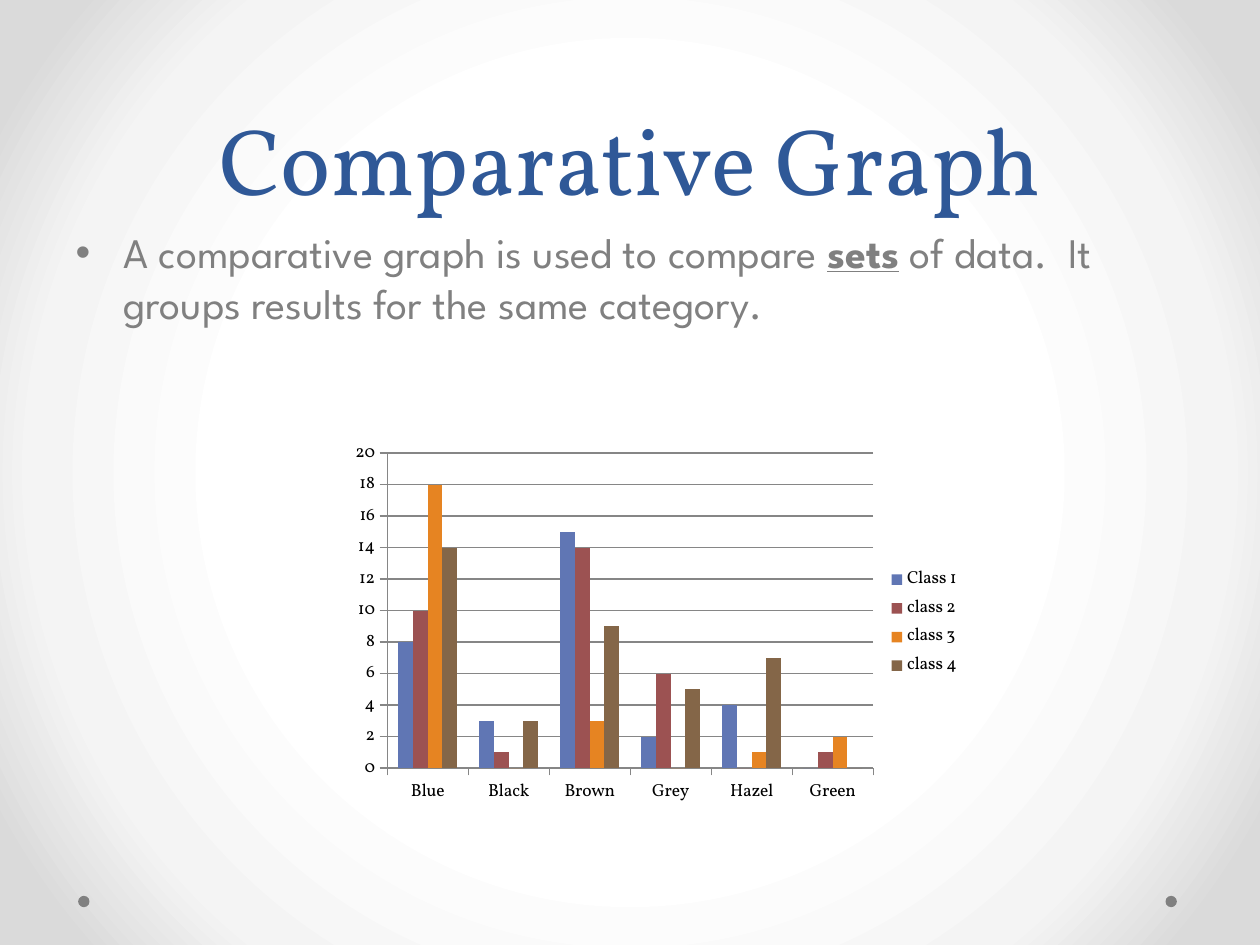
from lxml import etree
from pptx import Presentation, util as u
from pptx.chart import data
from pptx.dml.color import RGBColor
from pptx.enum import chart as ch, shapes, text
from pptx.oxml import ns, parse_xml

HUES = {"title": "2F5897", "grey": "808080", "axis": "868686", "ink": "000000",
        "bars": ["6076B4", "9C5252", "E68422", "846648"],
        "glow": {50: "FFFFFF", 76: "F4F4F4", 92: "DADADA"}}
HEAD, BODY = "Vollkorn", "League Spartan"


def rgb(hue):
    return RGBColor.from_string(hue)


class Deck:
    """Holds the style and the slide; places are shares of the slide's size."""

    def __init__(self, wide, high):
        self.prs = Presentation()
        self.prs.slide_width, self.prs.slide_height = u.Inches(wide), u.Inches(high)
        self.slide = self.prs.slides.add_slide(self.prs.slide_layouts[1])

    def box(self, x, y, w, h):
        wide, high = self.prs.slide_width, self.prs.slide_height
        return [round(n) for n in (x * wide, y * high, w * wide, h * high)]

    def glow(self, stops):
        """Round gradient that spreads from the centre of the background."""
        self.slide.background.fill.solid()
        pr = self.slide.background._cSld.bg.bgPr
        marks = "".join(f'<a:gs pos="{at * 1000}"><a:srgbClr val="{hue}"/></a:gs>'
                        for at, hue in stops.items())
        grad = parse_xml(
            f'<a:gradFill {ns.nsdecls("a")} rotWithShape="1"><a:gsLst>{marks}</a:gsLst>'
            '<a:path path="circle"><a:fillToRect l="50000" t="50000" r="50000" b="50000"/>'
            '</a:path></a:gradFill>')
        pr.replace(pr[0], grad)

    def dot(self, *place):
        dot = self.slide.shapes.add_shape(shapes.MSO_SHAPE.OVAL, *self.box(*place))
        dot.shadow.inherit = False
        dot.fill.solid()
        dot.fill.fore_color.rgb = rgb(HUES["grey"])
        dot.line.fill.background()

    def hold(self, index, anchor, *place):
        """Move a placeholder and return its first paragraph."""
        item = self.slide.placeholders[index]
        item.left, item.top, item.width, item.height = self.box(*place)
        frame = item.text_frame
        frame.auto_size = text.MSO_AUTO_SIZE.NONE
        frame.vertical_anchor = anchor
        return frame.paragraphs[0]

    def run(self, par, words, face, size, hue, strong=False):
        run = par.add_run()
        run.text = words
        font = run.font
        font.name, font.size, font.color.rgb = face, u.Pt(size), rgb(hue)
        font.bold = font.underline = strong

    def title(self, words, *place):
        par = self.hold(0, text.MSO_ANCHOR.BOTTOM, *place)
        par.alignment = text.PP_ALIGN.CENTER
        par.line_spacing = u.Pt(58)
        self.run(par, words, HEAD, 54, HUES["title"])

    def point(self, parts, *place):
        par = self.hold(1, text.MSO_ANCHOR.TOP, *place)
        par.space_before = u.Pt(4.8)
        pr = par._p.get_or_add_pPr()
        pr.set("marL", str(u.Inches(0.38)))
        pr.set("indent", str(u.Inches(-0.38)))
        etree.SubElement(pr, ns.qn("a:buFont")).set("typeface", "Arial")
        etree.SubElement(pr, ns.qn("a:buChar")).set("char", "•")
        for words, strong in parts:
            self.run(par, words, BODY, 24, HUES["grey"], strong)

    def chart(self, cats, rows, *place):
        facts = data.CategoryChartData()
        facts.categories = cats
        for name, vals in rows.items():
            facts.add_series(name, vals)
        kind = ch.XL_CHART_TYPE.COLUMN_CLUSTERED
        chart = self.slide.shapes.add_chart(kind, *self.box(*place), facts).chart
        chart.has_title = False
        chart.font.name, chart.font.size = HEAD, u.Pt(10)
        chart.font.color.rgb = rgb(HUES["ink"])
        # Legend
        chart.has_legend = True
        chart.legend.position = ch.XL_LEGEND_POSITION.RIGHT
        chart.legend.include_in_layout = False
        # Axes and grid
        scale = chart.value_axis
        scale.minimum_scale, scale.maximum_scale, scale.major_unit = 0, 20, 2
        scale.has_major_gridlines = True
        lines = [scale.major_gridlines.format.line]
        for axis in (scale, chart.category_axis):
            axis.major_tick_mark = ch.XL_TICK_MARK.OUTSIDE
            axis.minor_tick_mark = ch.XL_TICK_MARK.NONE
            lines.append(axis.format.line)
        for line in lines:
            line.color.rgb, line.width = rgb(HUES["axis"]), u.Pt(0.75)
        # Bars
        plot = chart.plots[0]
        plot.gap_width, plot.overlap, plot.vary_by_categories = 150, 0, False
        for bars, hue in zip(plot.series, HUES["bars"]):
            bars.format.fill.solid()
            bars.format.fill.fore_color.rgb = rgb(hue)


def main():
    deck = Deck(10, 7.5)

    # Background and corner dots
    deck.glow(HUES["glow"])
    for x in (0.925, 0.062):
        deck.dot(x, 0.948, 0.009, 0.012)

    # Heading and text
    deck.title("Comparative Graph", 0.05, 0, 0.9, 0.7 / 3)
    deck.point([("A comparative graph is used to compare ", False),
                ("sets", True),
                (" of data.  It groups results for the same category.", False)],
               0.05, 0.7 / 3, 0.9, 0.66)

    # Eye colours by class
    deck.chart(["Blue", "Black", "Brown", "Grey", "Hazel", "Green"],
               {"Class 1": [8, 3, 15, 2, 4, 0],
                "class 2": [10, 1, 14, 6, 0, 1],
                "class 3": [18, 0, 3, 0, 1, 2],
                "class 4": [14, 3, 9, 5, 7, 0]},
               0.272, 0.459, 0.5, 0.4)

    deck.prs.save("out.pptx")


if __name__ == "__main__":
    main()
